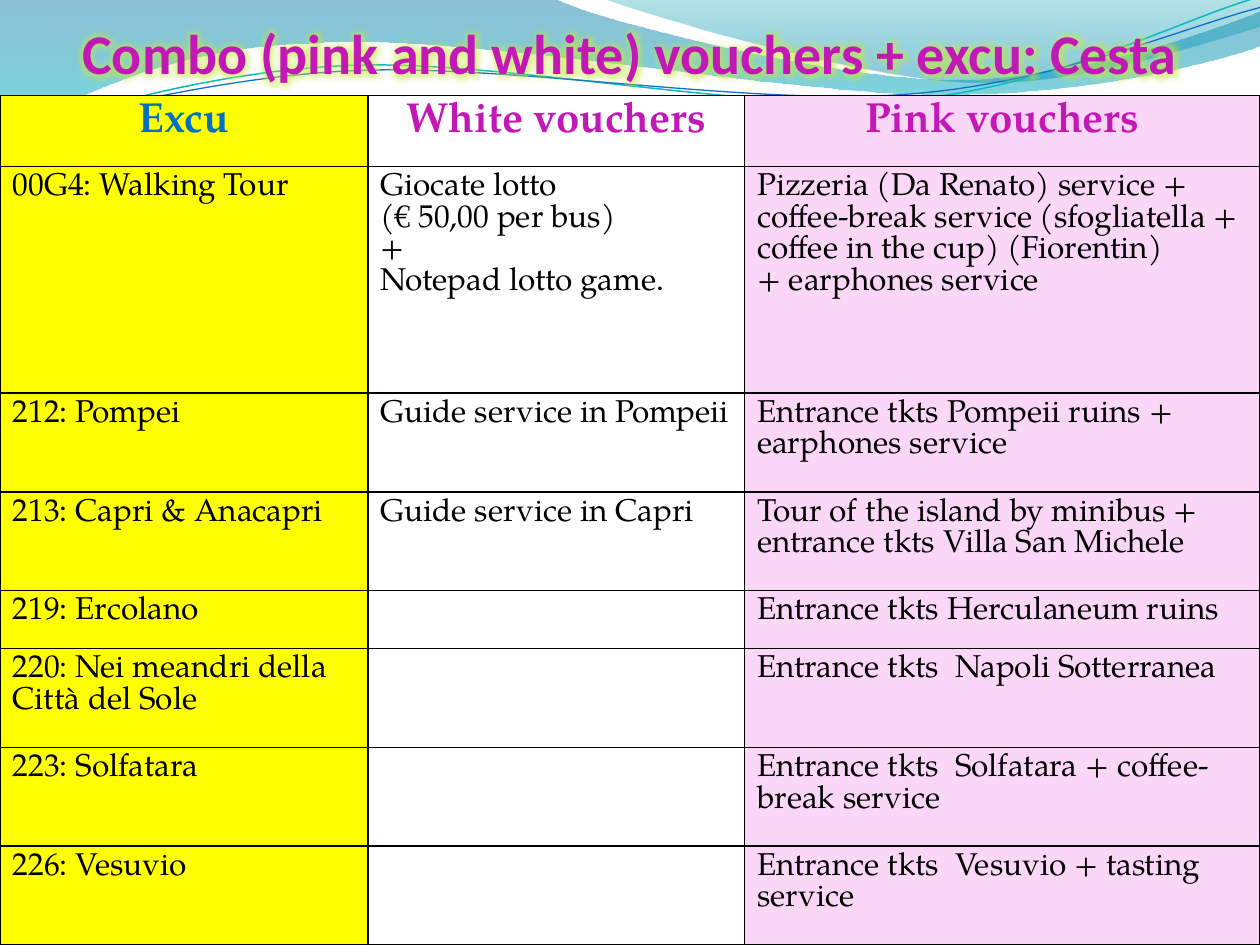
from lxml import etree
from pptx import Presentation
from pptx import util as u
from pptx.dml.color import RGBColor
from pptx.enum import text
from pptx.oxml import parse_xml
from pptx.oxml.ns import qn

Inches, Pt = u.Inches, u.Pt
BODY_FONT = "TeX Gyre Pagella"
MAGENTA, BLUE, BLACK = "C218B6", "0070C0", "000000"
COLUMN_FILLS = ["FFFF00", "FFFFFF", "FAD6F7"]
COLUMN_WIDTHS = [2.92, 2.99, 4.09]
HEADING_ROW, TALL_ROW, SHORT_ROW = 0.56, 1.8, 0.46
HEADINGS = [("Excu", BLUE), ("White vouchers", MAGENTA), ("Pink vouchers", MAGENTA)]
EXCURSIONS = [
    ("00G4: Walking Tour",
     "Giocate lotto\n(€ 50,00 per bus)\n+\nNotepad lotto game.",
     "Pizzeria (Da Renato) service + coffee-break service (sfogliatella + "
     "coffee in the cup) (Fiorentin)\n+ earphones service"),
    ("212: Pompei", "Guide service in Pompeii",
     "Entrance tkts Pompeii ruins + earphones service"),
    ("213: Capri & Anacapri", "Guide service in Capri",
     "Tour of the island by minibus + entrance tkts Villa San Michele"),
    ("219: Ercolano", "", "Entrance tkts Herculaneum ruins"),
    ("220: Nei meandri della Città del Sole", "", "Entrance tkts  Napoli Sotterranea"),
    ("223: Solfatara", "", "Entrance tkts  Solfatara + coffee-break service"),
    ("226: Vesuvio", "", "Entrance tkts  Vesuvio + tasting service"),
]

# Each outline is a start point followed by straight (1 point) or cubic (3 points) steps.
BROAD_WAVE = [
    [(0, 0)], [(4.4, -0.01)],
    [(4.76, 0.17), (6.64, 0.63), (7.58, 0.63)],
    [(8.53, 0.63), (9.58, 0.26), (10, 0.09)], [(10.01, 0.36)],
    [(9.83, 0.44), (8.7, 0.76), (7.46, 0.75)],
    [(6.22, 0.75), (3.82, 0.28), (2.57, 0.34)],
    [(1.29, 0.36), (0.46, 0.83), (-0.01, 1.13)],
]
CORNER_WAVE = [
    [(4.79, -0.01)],
    [(5.09, 0.11), (6.82, 0.62), (7.69, 0.65)],
    [(8.56, 0.69), (9.61, 0.32), (10, 0.21)], [(10, 0)],
]
TEAL_LINE = [
    [(0, 1.11)],
    [(0.48, 0.93), (1.58, 0.57), (2.77, 0.52)],
    [(3.95, 0.47), (5.93, 0.89), (7.13, 0.8)],
    [(8.33, 0.71), (9.38, 0.15), (9.98, -0.02)],
]
BLUE_LINE = [
    [(0, 1.04)],
    [(0.47, 0.96), (1.64, 0.61), (2.83, 0.56)],
    [(4.03, 0.51), (5.97, 0.84), (7.17, 0.75)],
    [(8.36, 0.67), (9.41, 0.21), (10, 0.06)],
]


def rgb(value):
    return RGBColor.from_string(value)


def style_font(font, name, size, color, bold):
    font.name, font.size, font.bold = name, Pt(size), bold
    font.color.rgb = rgb(color)


def bend_steps(curve, outline):
    """Merge the three straight segments of each cubic step into one curve."""
    segments = iter(list(curve._element.iter(qn("a:lnTo"))))
    for step in outline[1:]:
        first, *others = [next(segments) for _ in step]
        if others:
            first.tag = qn("a:cubicBezTo")
            for other in others:
                first.append(other[0])
                other.getparent().remove(other)


def add_outline(slide, box, outline, closed):
    left, top = box[:2]
    points = [(Inches(left + x), Inches(top + y)) for step in outline for x, y in step]
    builder = slide.shapes.build_freeform(*points[0])
    builder.add_line_segments(points[1:], close=closed)
    curve = builder.convert_to_shape()
    bend_steps(curve, outline)
    curve.shadow.inherit = False
    return curve


def add_wave(slide, box, outline, stops):
    wave = add_outline(slide, box, outline, True)
    wave.line.fill.background()
    wave.fill.gradient()
    wave.fill.gradient_angle = 270
    for stop, (position, color, _) in zip(wave.fill.gradient_stops, stops):
        stop.position = position
        stop.color.rgb = rgb(color)
    for node, (_, _, opacity) in zip(wave._element.iter(qn("a:srgbClr")), stops):
        etree.SubElement(node, qn("a:alpha"), val=str(opacity * 1000))


def add_wave_line(slide, box, outline, color, width):
    curve = add_outline(slide, box, outline, False)
    curve.fill.background()
    curve.line.color.rgb = rgb(color)
    curve.line.width = Pt(width)


def add_waves(slide, box):
    add_wave(slide, box, BROAD_WAVE, [(0, "0074A1", 45), (1, "00C6CF", 55)])
    add_wave(slide, box, CORNER_WAVE, [(0, "00A1A9", 30), (0.8, "008BBF", 45)])
    add_wave_line(slide, box, TEAL_LINE, "0AB8BF", 0.85)
    add_wave_line(slide, box, BLUE_LINE, "0F6FC6", 0.75)


def add_title(slide, box, wording):
    title = slide.shapes.title
    title.left, title.top, title.width, title.height = map(Inches, box)
    slide.shapes._spTree.append(title._element)  # in front of the waves
    frame = title.text_frame
    frame.text = wording
    frame.word_wrap = True
    frame.vertical_anchor = text.MSO_ANCHOR.BOTTOM
    frame.margin_left = frame.margin_right = frame.margin_bottom = 0
    frame.margin_top = Inches(0.05)
    heading = frame.paragraphs[0]
    heading.alignment = text.PP_ALIGN.CENTER
    style_font(heading.font, "Calibri", 32, MAGENTA, True)
    heading.runs[0].font._element.append(parse_xml(
        '<a:effectLst xmlns:a="http://schemas.openxmlformats.org/drawingml/2006/main">'
        '<a:glow rad="139700"><a:srgbClr val="C3EA3C"><a:alpha val="60000"/></a:srgbClr>'
        '</a:glow></a:effectLst>'))


def add_borders(cell, color, width):
    properties = cell._tc.get_or_add_tcPr()
    for side in ("a:lnL", "a:lnR", "a:lnT", "a:lnB"):
        border = etree.SubElement(properties, qn(side), w=str(Pt(width)))
        fill = etree.SubElement(border, qn("a:solidFill"))
        etree.SubElement(fill, qn("a:srgbClr"), val=color)


def fill_cell(cell, wording, background, color, size, bold, alignment):
    add_borders(cell, BLACK, 1)
    cell.fill.solid()
    cell.fill.fore_color.rgb = rgb(background)
    cell.text = wording
    for paragraph in cell.text_frame.paragraphs:
        paragraph.alignment = alignment
        style_font(paragraph.font, BODY_FONT, size, color, bold)


def add_voucher_table(slide, box):
    vouchers = slide.shapes.add_table(len(EXCURSIONS) + 1, len(COLUMN_WIDTHS),
                                      *map(Inches, box)).table
    usual = (box[3] - HEADING_ROW - TALL_ROW - SHORT_ROW) / (len(EXCURSIONS) - 2)
    heights = [HEADING_ROW, TALL_ROW, usual, usual, SHORT_ROW, usual, usual, usual]
    for column, width in zip(vouchers.columns, COLUMN_WIDTHS):
        column.width = Inches(width)
    for row, height in zip(vouchers.rows, heights):
        row.height = Inches(height)
    for c, (background, (heading, color)) in enumerate(zip(COLUMN_FILLS, HEADINGS)):
        fill_cell(vouchers.cell(0, c), heading, background, color, 24, True,
                  text.PP_ALIGN.CENTER)
        for r, excursion in enumerate(EXCURSIONS, 1):
            fill_cell(vouchers.cell(r, c), excursion[c], background, BLACK, 18, False,
                      text.PP_ALIGN.LEFT)


def main():
    deck = Presentation()
    deck.slide_width, deck.slide_height = Inches(10), Inches(7.5)
    slide = deck.slides.add_slide(deck.slide_layouts[5])
    add_waves(slide, (0, 0, 10, 1.13))
    add_title(slide, (0, 0, 10, 0.68), "Combo (pink and white) vouchers + excu: Cesta")
    add_voucher_table(slide, (0, 0.76, 10, 6.74))
    deck.save("out.pptx")


if __name__ == "__main__":
    main()
